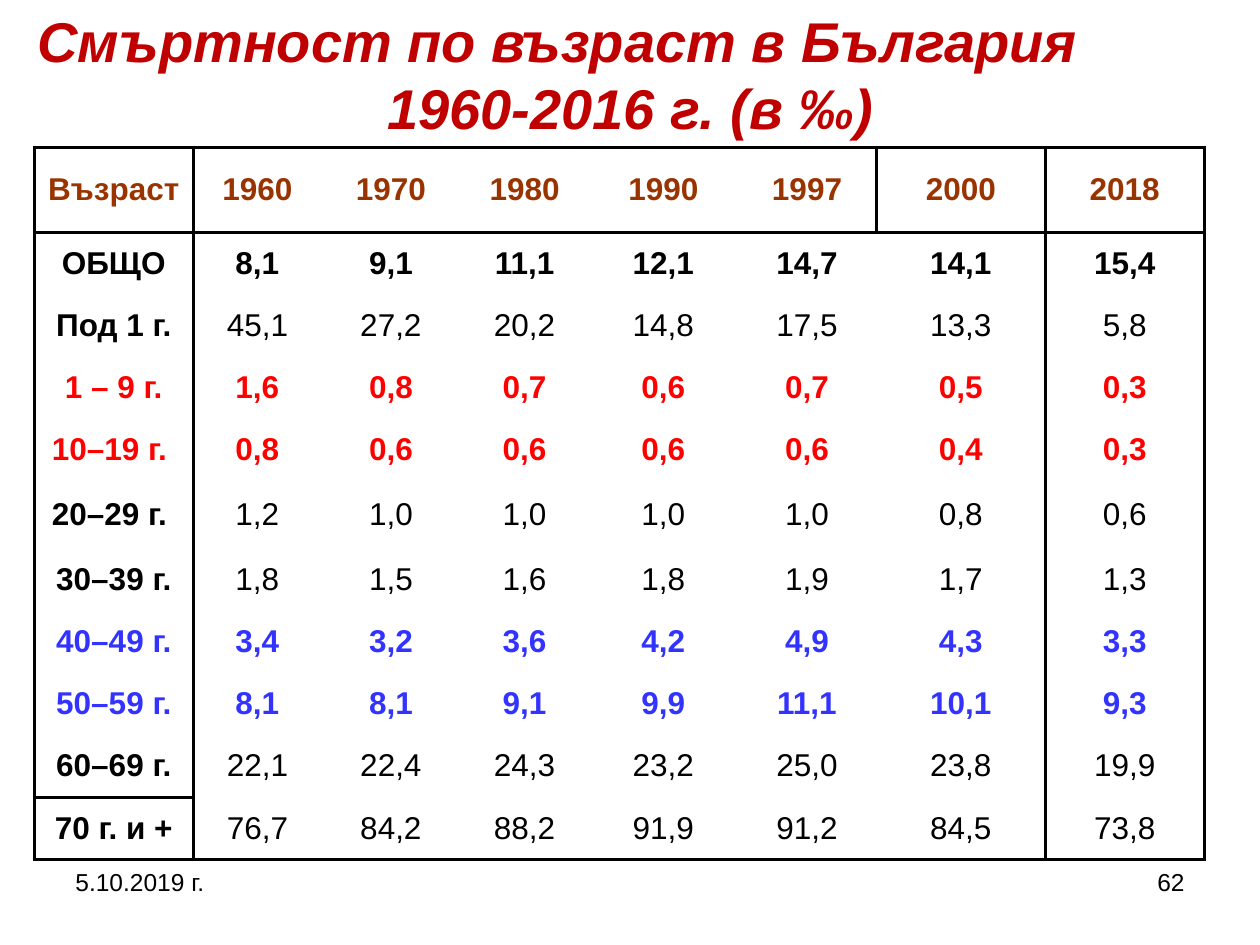
from lxml import etree
from pptx import Presentation
from pptx.dml.color import RGBColor
from pptx.enum.text import MSO_ANCHOR, PP_ALIGN
from pptx.oxml.ns import qn
from pptx.util import Pt

LEFT, CENTER, RIGHT = PP_ALIGN.LEFT, PP_ALIGN.CENTER, PP_ALIGN.RIGHT
TOP, MIDDLE = MSO_ANCHOR.TOP, MSO_ANCHOR.MIDDLE

BLACK = RGBColor(0x00, 0x00, 0x00)
DARK_RED = RGBColor(0xC0, 0x00, 0x00)
BROWN = RGBColor(0x99, 0x33, 0x00)
RED = RGBColor(0xFF, 0x00, 0x00)
BLUE = RGBColor(0x33, 0x33, 0xFF)

# Each row: colour, values in bold, cell texts
ROWS = [
    (BROWN, True, ["Възраст", "1960", "1970", "1980", "1990", "1997", "2000", "2018"]),
    (BLACK, True, ["ОБЩО", "8,1", "9,1", "11,1", "12,1", "14,7", "14,1", "15,4"]),
    (BLACK, False, ["Под 1 г.", "45,1", "27,2", "20,2", "14,8", "17,5", "13,3", "5,8"]),
    (RED, True, ["1 – 9 г.", "1,6", "0,8", "0,7", "0,6", "0,7", "0,5", "0,3"]),
    (RED, True, ["10–19 г. ", "0,8", "0,6", "0,6", "0,6", "0,6", "0,4", "0,3"]),
    (BLACK, False, ["20–29 г. ", "1,2", "1,0", "1,0", "1,0", "1,0", "0,8", "0,6"]),
    (BLACK, False, ["30–39 г.", "1,8", "1,5", "1,6", "1,8", "1,9", "1,7", "1,3"]),
    (BLUE, True, ["40–49 г.", "3,4", "3,2", "3,6", "4,2", "4,9", "4,3", "3,3"]),
    (BLUE, True, ["50–59 г.", "8,1", "8,1", "9,1", "9,9", "11,1", "10,1", "9,3"]),
    (BLACK, False, ["60–69 г.", "22,1", "22,4", "24,3", "23,2", "25,0", "23,8", "19,9"]),
    (BLACK, False, ["70 г. и +", "76,7", "84,2", "88,2", "91,9", "91,2", "84,5", "73,8"]),
]
COLUMN_WIDTHS = [90.8, 73.4, 79.2, 73.6, 85, 79.2, 96.6, 90.8]
ROW_HEIGHTS = [48.5] + [35.5] * 4 + [38.9] + [35.5] * 5


def has_vertical_line(row, edge):
    """Tell whether a line stands at the left edge of column number `edge`."""
    return edge in (0, 1, 7, 8) or (row == 0 and edge == 6)


def has_horizontal_line(edge, column):
    """Tell whether a line lies at the top edge of row number `edge`."""
    return edge in (0, 1, len(ROWS)) or (edge == 10 and column == 0)


class SlideBuilder:
    font_name = "Arial"
    line_width = 2

    def __init__(self, slide):
        self.slide = slide

    def style(self, paragraph, size, color, align, bold=False, italic=False):
        paragraph.alignment = align
        for run in paragraph.runs:
            font = run.font
            font.name, font.size = self.font_name, Pt(size)
            font.bold, font.italic = bold, italic
            font.color.rgb = color

    def text(self, box, lines, aligns, size, color, anchor=TOP, **emphasis):
        shape = self.slide.shapes.add_textbox(*map(Pt, box))
        text_frame = shape.text_frame
        text_frame.word_wrap = True
        text_frame.vertical_anchor = anchor
        text_frame.text = "\n".join(lines)
        for paragraph, align in zip(text_frame.paragraphs, aligns):
            self.style(paragraph, size, color, align, **emphasis)

    def borders(self, cell, sides):
        """Draw the sides, given in the order left, right, top, bottom."""
        properties = cell._tc.get_or_add_tcPr()
        for index, (tag, visible) in enumerate(zip(("lnL", "lnR", "lnT", "lnB"), sides)):
            line = etree.Element(qn(f"a:{tag}"), w=str(Pt(self.line_width)))
            if visible:
                fill = etree.SubElement(line, qn("a:solidFill"))
                etree.SubElement(fill, qn("a:srgbClr"), val=str(BLACK))
            else:
                etree.SubElement(line, qn("a:noFill"))
            properties.insert(index, line)

    def table(self, left, top, rows, widths, heights, size):
        frame = self.slide.shapes.add_table(
            len(rows), len(widths), Pt(left), Pt(top), Pt(sum(widths)), Pt(sum(heights)))
        table = frame.table
        table.first_row = table.horz_banding = False
        for column, width in zip(table.columns, widths):
            column.width = Pt(width)
        for r, (color, bold, texts) in enumerate(rows):
            table.rows[r].height = Pt(heights[r])
            for c, text in enumerate(texts):
                cell = table.cell(r, c)
                cell.text = text
                cell.vertical_anchor = MIDDLE
                cell.fill.background()
                self.style(cell.text_frame.paragraphs[0], size, color, CENTER,
                           bold=bold or c == 0)
                self.borders(cell, (has_vertical_line(r, c), has_vertical_line(r, c + 1),
                                    has_horizontal_line(r, c), has_horizontal_line(r + 1, c)))


def main():
    presentation = Presentation()
    presentation.slide_width, presentation.slide_height = Pt(720), Pt(540)
    builder = SlideBuilder(presentation.slides.add_slide(presentation.slide_layouts[6]))

    # Slide number
    builder.text((516, 492, 168, 37.5), ["62"], [RIGHT], 14, BLACK)

    # Mortality table
    builder.table(19.6, 84.2, ROWS, COLUMN_WIDTHS, ROW_HEIGHTS, 18)

    # Title
    builder.text((14.4, -0.5, 692, 85),
                 ["Смъртност по възраст в България", "1960-2016 г. (в ‰)"],
                 [LEFT, CENTER], 32, DARK_RED, MIDDLE, bold=True, italic=True)

    # Date
    builder.text((36, 492, 168, 37.5), ["5.10.2019 г."], [LEFT], 14, BLACK)

    presentation.save("out.pptx")


if __name__ == "__main__":
    main()
